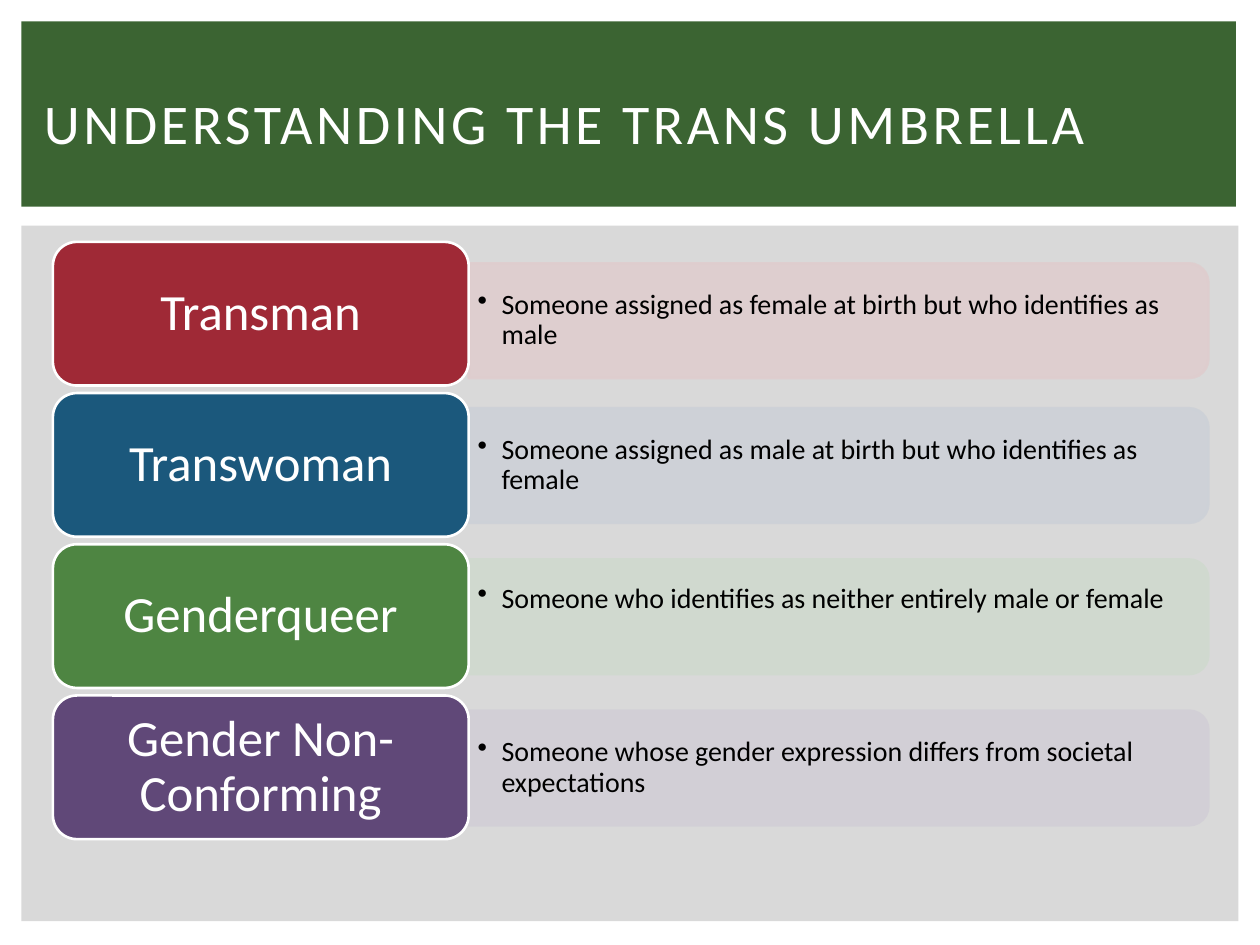
from lxml import etree
from pptx import Presentation
from pptx.dml.color import RGBColor
from pptx.enum import shapes, text
from pptx.oxml.ns import qn
from pptx.util import Inches, Pt

KIND = shapes.MSO_SHAPE
# label, label colour, band colour, band drop, extra bottom inset, description
ROWS = [
    ("Transman", "9F2936", "DFCDCE", 0.17, 0,
     "Someone assigned as female at birth but who identifies as male"),
    ("Transwoman", "1B587C", "CDD1D7", 0.12, 0,
     "Someone assigned as male at birth but who identifies as female"),
    ("Genderqueer", "4E8542", "D0D9CF", 0.12, 0.28,
     "Someone who identifies as neither entirely male or female"),
    ("Gender Non-Conforming", "604878", "D2CFD6", 0.12, 0,
     "Someone whose gender expression differs from societal expectations"),
]


def paint(fmt, color):
    fmt.solid()
    fmt.fore_color.rgb = RGBColor.from_string(color)


def add_box(slide, kind, box, fill, line=None):
    shape = slide.shapes.add_shape(kind, *map(Inches, box))
    shape.shadow.inherit = False
    paint(shape.fill, fill)
    if line:
        paint(shape.line.fill, line)
        shape.line.width = Pt(1.5)
    else:
        shape.line.fill.background()
    return shape


def write(shape, words, size, color, insets, align=text.PP_ALIGN.LEFT, gap=1.0):
    """Fill the shape with one paragraph; insets are left, top, right, bottom."""
    frame = shape.text_frame
    sides = ("margin_left", "margin_top", "margin_right", "margin_bottom")
    form = dict(zip(sides, map(Inches, insets)), word_wrap=True,
                vertical_anchor=text.MSO_ANCHOR.MIDDLE)
    for name, value in form.items():
        setattr(frame, name, value)
    para = frame.paragraphs[0]
    para.alignment, para.line_spacing = align, gap
    run = para.add_run()
    run.text = words
    for name, value in {"name": "Calibri", "size": Pt(size)}.items():
        setattr(run.font, name, value)
    paint(run.font.fill, color)
    return para


def add_bullet(para, indent):
    props = para._p.get_or_add_pPr()
    props.set("marL", str(Inches(indent)))
    props.set("indent", str(-Inches(indent)))
    etree.SubElement(props, qn("a:buChar")).set("char", "•")


def add_header(slide, left, top, width, height):
    add_box(slide, KIND.RECTANGLE, (left, top, width, height), "3B6432")
    area = (left + 0.08, top + 0.22, width - 0.31, height - 0.32)
    title = slide.shapes.add_textbox(*map(Inches, area))
    para = write(title, "UNDERSTANDING THE TRANS UMBRELLA", 32, "FFFFFF",
                 (0.1, 0.05, 0.1, 0.05))
    para.runs[0].font._element.set("spc", "200")


def add_band(slide, left, top, width, height, color, words, extra):
    """Place a band with rounded right corners and its bulleted text."""
    # Unrotated box with the same centre as the upright band
    shift = (width - height) / 2
    band = add_box(slide, KIND.ROUND_2_SAME_RECTANGLE,
                   (left + shift, top - shift, height, width), color, color)
    band.rotation = 90
    for tint in band._element.spPr.iter(qn("a:srgbClr")):
        etree.SubElement(tint, qn("a:alpha")).set("val", "90000")
    area = (left, top + 0.04, width - 0.05, height - 0.08)
    note = slide.shapes.add_textbox(*map(Inches, area))
    para = write(note, words, 16, "000000", (0.07, 0.03, 0.07, 0.03 + extra),
                 gap=0.9)
    add_bullet(para, 0.19)


def add_row(slide, left, top, width, height, row):
    name, dark, pale, drop, extra, words = row
    side = 3.3
    add_band(slide, left + side, top + drop, width - side, 0.91, pale, words, extra)
    label = add_box(slide, KIND.ROUNDED_RECTANGLE, (left, top, side, height),
                    dark, "FFFFFF")
    write(label, name, 29, "FFFFFF", (0.12, 0.06, 0.12, 0.06),
          text.PP_ALIGN.CENTER, 0.9)


def add_list(slide, left, top, width, height):
    add_box(slide, KIND.RECTANGLE, (left, top, width, height), "D9D9D9")
    for i, row in enumerate(ROWS):
        add_row(slide, left + 0.25, top + 0.13 + 1.2 * i, width - 0.49, 1.14, row)


def main():
    deck = Presentation()
    deck.slide_width, deck.slide_height = Inches(10), Inches(7.5)
    slide = deck.slides.add_slide(deck.slide_layouts[6])
    add_header(slide, 0.17, 0.17, 9.64, 1.47)
    add_list(slide, 0.17, 1.79, 9.66, 5.52)
    deck.save("out.pptx")


if __name__ == "__main__":
    main()
